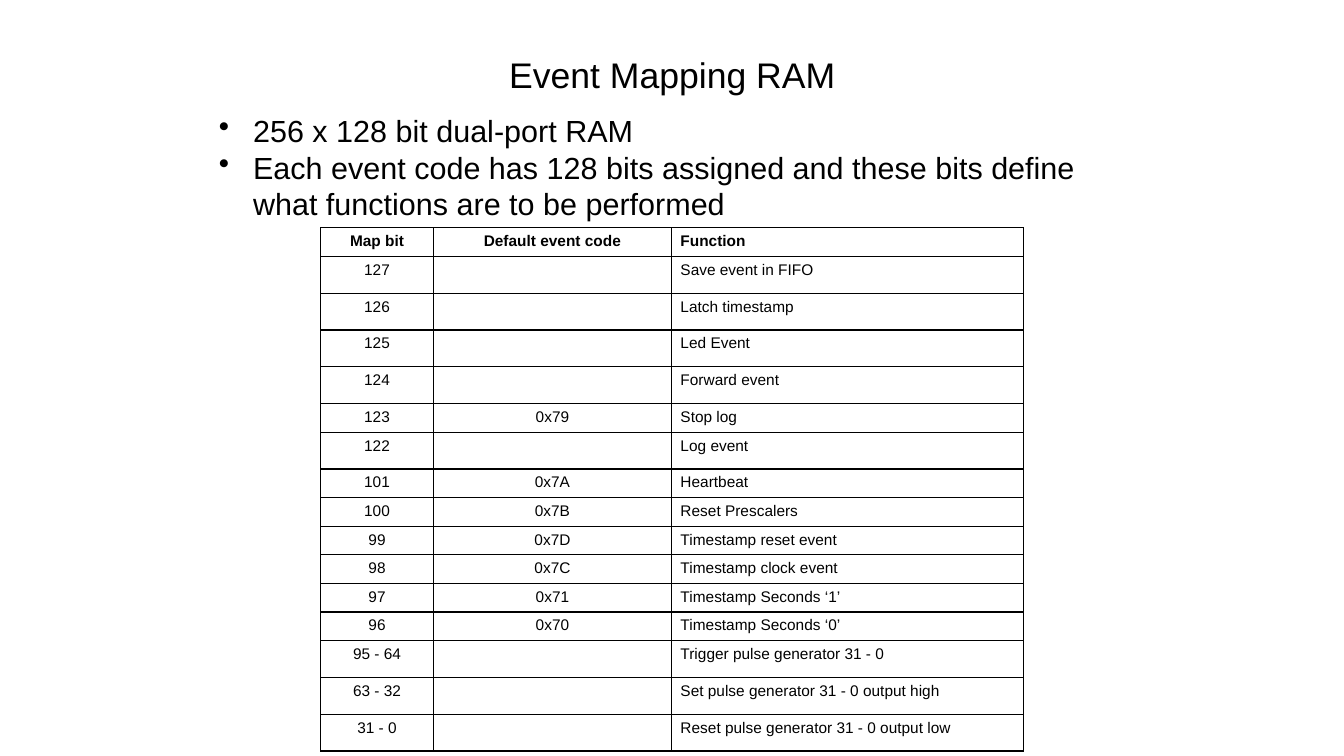
from lxml import etree
from pptx import Presentation
from pptx.dml.color import RGBColor
from pptx.enum.text import MSO_ANCHOR, PP_ALIGN
from pptx.oxml.ns import qn
from pptx.util import Inches, Pt

CENTER, LEFT = PP_ALIGN.CENTER, PP_ALIGN.LEFT
MIDDLE, TOP = MSO_ANCHOR.MIDDLE, MSO_ANCHOR.TOP
BLACK = "000000"


def style(para, size, align=LEFT, bold=False):
    para.alignment = align
    para.font.name = "Arial"
    para.font.size = Pt(size)
    para.font.bold = bold
    para.font.color.rgb = RGBColor.from_string(BLACK)


def add_text(page, top, height, anchor):
    box = page.shapes.add_textbox(Inches(2.17), Inches(top), Inches(9), Inches(height))
    frame = box.text_frame
    frame.word_wrap = True
    frame.vertical_anchor = anchor
    frame.margin_left = frame.margin_right = frame.margin_top = frame.margin_bottom = 0
    return frame


deck = Presentation()
deck.slide_width, deck.slide_height = Inches(13.33), Inches(7.5)
page = deck.slides.add_slide(deck.slide_layouts[6])

# Title
title = add_text(page, 0.11, 1.25, MIDDLE)
title.text = "Event Mapping RAM"
style(title.paragraphs[0], 25.4, CENTER)

# Bullets
body = add_text(page, 1.11, 4.35, TOP)
body.text = (
    "256 x 128 bit dual-port RAM\n"
    "Each event code has 128 bits assigned and these bits define "
    "what functions are to be performed"
)
for para in body.paragraphs:
    style(para, 21.8)
    properties = para._p.get_or_add_pPr()
    properties.set("marL", str(Inches(0.34)))
    properties.set("indent", str(-Inches(0.34)))
    bullet = etree.Element(qn("a:buChar"), char="•")
    properties.insert(0, bullet)

# Mapping table: rows without a default code are taller
mapping = [
    ("Map bit", "Default event code", "Function"),
    ("127", "", "Save event in FIFO"),
    ("126", "", "Latch timestamp"),
    ("125", "", "Led Event"),
    ("124", "", "Forward event"),
    ("123", "0x79", "Stop log"),
    ("122", "", "Log event"),
    ("101", "0x7A", "Heartbeat"),
    ("100", "0x7B", "Reset Prescalers"),
    ("99", "0x7D", "Timestamp reset event"),
    ("98", "0x7C", "Timestamp clock event"),
    ("97", "0x71", "Timestamp Seconds ‘1’"),
    ("96", "0x70", "Timestamp Seconds ‘0’"),
    ("95 - 64", "", "Trigger pulse generator 31 - 0"),
    ("63 - 32", "", "Set pulse generator 31 - 0 output high"),
    ("31 - 0", "", "Reset pulse generator 31 - 0 output low"),
]
table = page.shapes.add_table(
    len(mapping), 3, Inches(3.18), Inches(2.26), Inches(6.97), Inches(5.08)
).table
for column, width in zip(table.columns, (1.12, 2.36, 3.49)):
    column.width = Inches(width)

for r, entry in enumerate(mapping):
    table.rows[r].height = Inches(0.27 if entry[1] else 0.365)
    for c, text in enumerate(entry):
        cell = table.cell(r, c)
        cell.text = text
        cell.fill.background()
        cell.margin_left = cell.margin_right = Inches(0.09)
        cell.margin_top = cell.margin_bottom = Inches(0.05)
        style(cell.text_frame.paragraphs[0], 11, LEFT if c == 2 else CENTER, r == 0)
        # Black border on every side, placed ahead of the fill
        cell_properties = cell._tc.get_or_add_tcPr()
        for position, side in enumerate(("a:lnL", "a:lnR", "a:lnT", "a:lnB")):
            line = etree.Element(qn(side), w=str(Pt(1)))
            fill = etree.SubElement(line, qn("a:solidFill"))
            etree.SubElement(fill, qn("a:srgbClr"), val=BLACK)
            cell_properties.insert(position, line)

deck.save("out.pptx")
